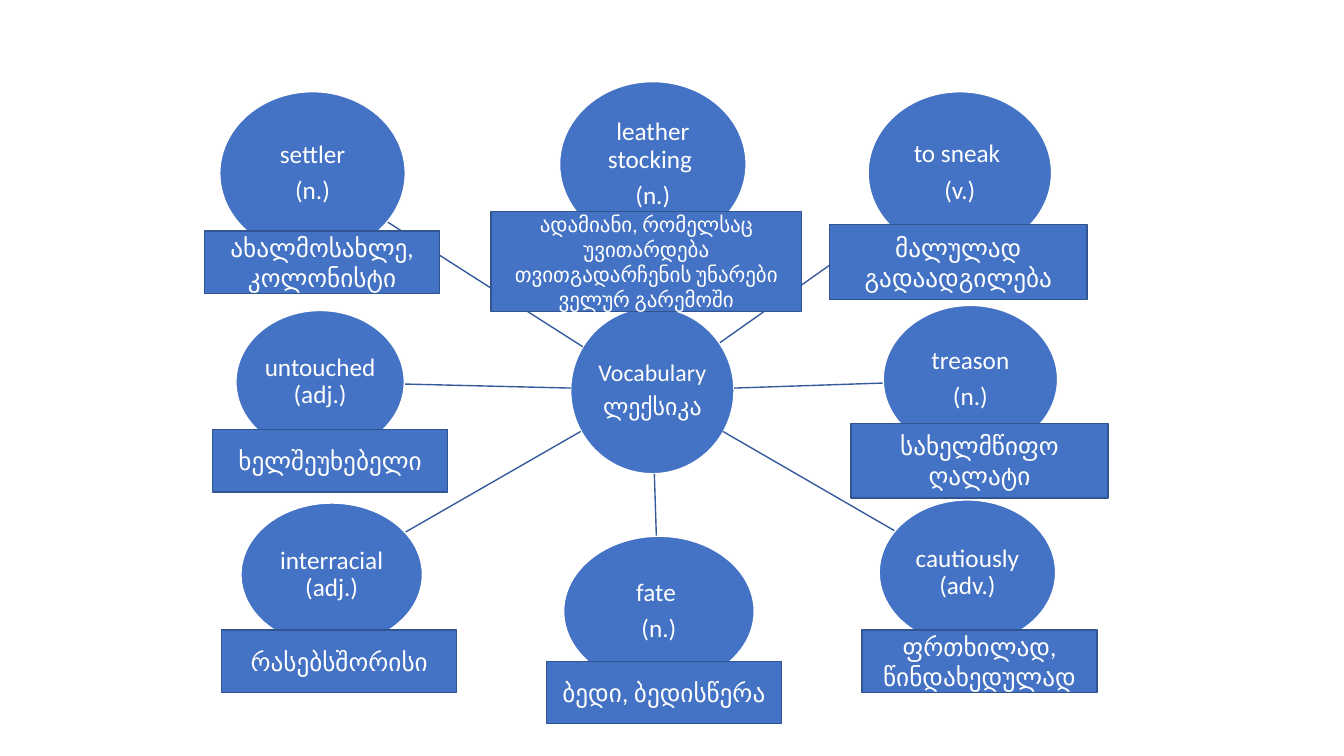
from math import hypot

from lxml import etree
from pptx import Presentation
from pptx.dml.color import RGBColor
from pptx.enum.shapes import MSO_CONNECTOR, MSO_SHAPE
from pptx.enum.text import MSO_ANCHOR, PP_ALIGN
from pptx.oxml.ns import qn
from pptx.util import Pt

PX = 9144  # EMU; 100 px to the inch
ELLIPSE, RECT = MSO_SHAPE.OVAL, MSO_SHAPE.RECTANGLE
STRAIGHT = MSO_CONNECTOR.STRAIGHT
MIDDLE, CENTER = MSO_ANCHOR.MIDDLE, PP_ALIGN.CENTER

HUB = (566, 305, 162, 165)
HUB_LINES = ["Vocabulary", "ლექსიკა"]

# word lines, ellipse box, translation, translation box, font size, has visible spoke
WORDS = [
    (["leather stocking ", "(n.)"], (555, 81, 185, 164),
     "ადამიანი, რომელსაც უვითარდება თვითგადარჩენის უნარები ველურ გარემოში",
     (487, 210, 308, 99), 15, False),
    (["to sneak ", "(v.)"], (861, 91, 182, 161),
     "მალულად გადაადგილება", (823, 223, 255, 74), 18, True),
    (["treason", "(n.)"], (876, 303, 173, 147),
     "სახელმწიფო ღალატი", (844, 420, 255, 74), 18, True),
    (["cautiously (adv.)"], (872, 496, 175, 144),
     "ფრთხილად, წინდახედულად", (855, 625, 233, 62), 18, True),
    (["fate ", "(n.)"], (559, 532, 189, 149),
     "ბედი, ბედისწერა", (542, 656, 233, 62), 18, True),
    (["interracial (adj.)"], (239, 499, 180, 142),
     "რასებსშორისი", (220, 625, 233, 62), 18, True),
    (["untouched (adj.)"], (234, 308, 167, 142),
     "ხელშეუხებელი", (211, 426, 233, 62), 18, True),
    (["settler", "(n.)"], (218, 91, 184, 162),
     "ახალმოსახლე, კოლონისტი", (203, 229, 233, 62), 18, True),
]


def color(hex_string):
    return RGBColor.from_string(hex_string)


def center(box):
    x, y, w, h = box
    return x + w / 2, y + h / 2


def edge_point(box, target):
    """Point where the ray from the ellipse's centre to target leaves the ellipse."""
    cx, cy = center(box)
    dx, dy = target[0] - cx, target[1] - cy
    t = 1 / hypot(dx / (box[2] / 2), dy / (box[3] / 2))
    return round(cx + t * dx), round(cy + t * dy)


class WordMap:
    font, fill, text = "Calibri", "4472C4", "FFFFFF"
    ellipse_line, spoke_line, box_line = "FFFFFF", "365B9D", "325491"

    def __init__(self, slide):
        self.shapes = slide.shapes

    def shape(self, kind, box, lines, size, line):
        sp = self.shapes.add_shape(kind, *(v * PX for v in box))
        sp.shadow.inherit = False
        sp.fill.solid()
        sp.fill.fore_color.rgb = color(self.fill)
        sp.line.color.rgb = color(line)
        sp.line.width = Pt(1)
        tf = sp.text_frame
        tf.word_wrap = True
        tf.vertical_anchor = MIDDLE
        tf.text = "\n".join(lines)
        for p in tf.paragraphs:
            p.alignment = CENTER
            p.font.name = self.font
            p.font.size = Pt(size)
            p.font.color.rgb = color(self.text)
        return tf

    def ellipse(self, box, lines, size=18):
        tf = self.shape(ELLIPSE, box, lines, size, self.ellipse_line)
        tf.margin_left = tf.margin_right = tf.margin_top = tf.margin_bottom = PX
        for p in tf.paragraphs:
            p.line_spacing = 0.9
            p.space_after = Pt(0.35 * size)

    def translation(self, box, wording, size):
        self.shape(RECT, box, [wording], size, self.box_line)

    def spoke(self, start_box, end_box):
        x1, y1 = edge_point(start_box, center(end_box))
        x2, y2 = edge_point(end_box, center(start_box))
        c = self.shapes.add_connector(STRAIGHT, x1 * PX, y1 * PX, x2 * PX, y2 * PX)
        c.line.color.rgb = color(self.spoke_line)
        c.line.width = Pt(1)
        etree.SubElement(c._element.spPr, qn("a:effectLst"))


def main():
    prs = Presentation()
    prs.slide_width, prs.slide_height = 1333 * PX, 750 * PX
    s = prs.slides.add_slide(prs.slide_layouts[6])
    word_map = WordMap(s)

    word_map.ellipse(HUB, HUB_LINES, 17)
    for lines, box, _, _, _, has_spoke in WORDS:
        if has_spoke:
            word_map.spoke(HUB, box)
        word_map.ellipse(box, lines)
    for _, _, wording, box, size, _ in WORDS:
        word_map.translation(box, wording, size)

    prs.save("out.pptx")


if __name__ == "__main__":
    main()
